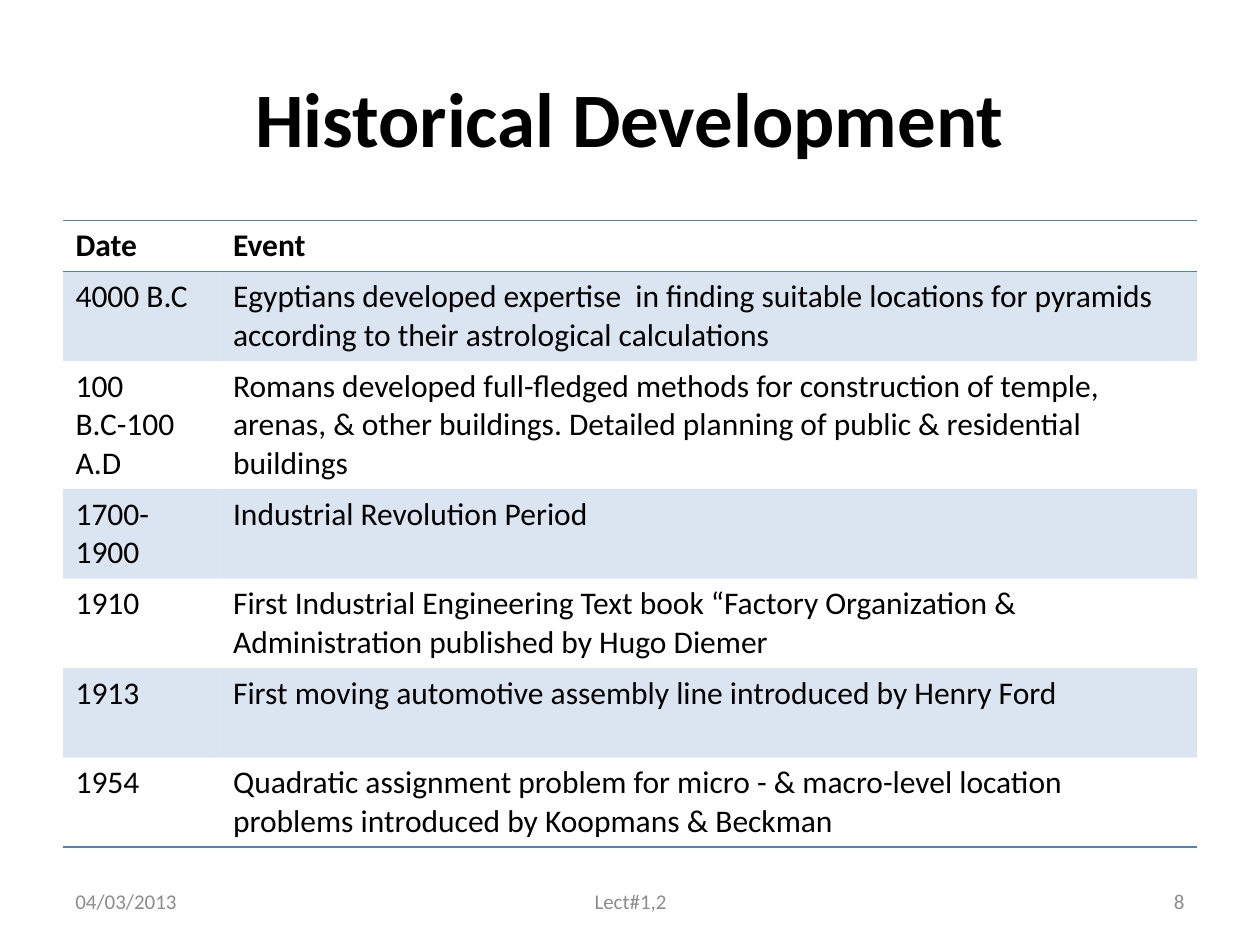
from lxml import etree
from pptx import Presentation
from pptx.dml.color import RGBColor
from pptx.enum.text import MSO_ANCHOR, PP_ALIGN
from pptx.oxml.ns import qn
from pptx.util import Inches, Pt

LEFT, CENTER, RIGHT = PP_ALIGN.LEFT, PP_ALIGN.CENTER, PP_ALIGN.RIGHT
MIDDLE = MSO_ANCHOR.MIDDLE
TITLE_ONLY = 5
FONT = "Calibri"
COLORS = {"text": "000000", "accent": "4F81BD", "footer": "8C8C8C"}
BAND_ALPHA = "20000"
LINE_HEIGHT, CELL_PADDING = 0.305, 0.1

EVENTS = [
    ("Date", "Event", 1),
    ("4000 B.C", "Egyptians developed expertise  in finding suitable locations for "
     "pyramids according to their astrological calculations", 2),
    ("100 B.C-100 A.D", "Romans developed full-fledged methods for construction of "
     "temple, arenas, & other buildings. Detailed planning of public & residential "
     "buildings", 3),
    ("1700-1900", "Industrial Revolution Period", 2),
    ("1910", "First Industrial Engineering Text book “Factory Organization & "
     "Administration published by Hugo Diemer", 2),
    ("1913", "First moving automotive assembly line introduced by Henry Ford", 2),
    ("1954", "Quadratic assignment problem for micro - & macro-level location "
     "problems introduced by Koopmans & Beckman", 2),
]
FOOTERS = [
    ("04/03/2013", 0.5, 2.33, LEFT),
    ("Lect#1,2", 3.42, 3.17, CENTER),
    ("8", 7.17, 2.33, RIGHT),
]


class SlideBuilder:
    """Holds the style and the current slide."""

    def __init__(self, presentation):
        layout = presentation.slide_layouts[TITLE_ONLY]
        self.slide = presentation.slides.add_slide(layout)

    def add_text(self, frame, text, size, color="text", bold=False, align=LEFT):
        paragraph = frame.paragraphs[0]
        paragraph.alignment = align
        run = paragraph.add_run()
        run.text = text
        formats = {"name": FONT, "size": Pt(size), "bold": bold}
        for attribute, value in formats.items():
            setattr(run.font, attribute, value)
        run.font.color.rgb = RGBColor.from_string(COLORS[color])

    def title(self, text, left, top, width, height):
        title = self.slide.shapes.title
        box = {"left": left, "top": top, "width": width, "height": height}
        for attribute, value in box.items():
            setattr(title, attribute, Inches(value))
        title.text_frame.vertical_anchor = MIDDLE
        self.add_text(title.text_frame, text, 44, bold=True, align=CENTER)

    def footer(self, text, left, width, align):
        box = self.slide.shapes.add_textbox(
            Inches(left), Inches(6.95), Inches(width), Inches(0.4))
        box.text_frame.word_wrap = True
        box.text_frame.vertical_anchor = MIDDLE
        self.add_text(box.text_frame, text, 12, "footer", align=align)

    def borders(self, cell, ruled_sides):
        properties = cell._tc.get_or_add_tcPr()
        for side in "LRTB":
            line = etree.SubElement(properties, qn(f"a:ln{side}"), w=str(Pt(1)))
            if side in ruled_sides:
                fill = etree.SubElement(line, qn("a:solidFill"))
                etree.SubElement(fill, qn("a:srgbClr"), val=COLORS["accent"])
            else:
                etree.SubElement(line, qn("a:noFill"))

    def band(self, cell, shaded):
        if not shaded:
            cell.fill.background()
            return
        cell.fill.solid()
        cell.fill.fore_color.rgb = RGBColor.from_string(COLORS["accent"])
        color = cell._tc.tcPr.find(qn("a:solidFill")).find(qn("a:srgbClr"))
        etree.SubElement(color, qn("a:alpha"), val=BAND_ALPHA)

    def table(self, events, left, top, column_widths):
        heights = [CELL_PADDING + LINE_HEIGHT * lines for *_, lines in events]
        table = self.slide.shapes.add_table(
            len(events), len(column_widths), Inches(left), Inches(top),
            Inches(sum(column_widths)), Inches(sum(heights))).table
        for column, width in zip(table.columns, column_widths):
            column.width = Inches(width)
        ruled_sides = {0: "TB", 1: "T", len(events) - 1: "B"}
        for index, (date, event, _) in enumerate(events):
            table.rows[index].height = Inches(heights[index])
            for cell, text in zip(table.rows[index].cells, (date, event)):
                self.add_text(cell.text_frame, text, 18, bold=index == 0)
                self.borders(cell, ruled_sides.get(index, ""))
                self.band(cell, index % 2 == 1)


def main():
    presentation = Presentation()
    presentation.slide_width = Inches(10)
    presentation.slide_height = Inches(7.5)
    builder = SlideBuilder(presentation)
    builder.title("Historical Development", 0.5, 0.3, 9, 1.25)
    builder.table(EVENTS, 0.5, 1.75, (1.25, 7.75))
    for footer in FOOTERS:
        builder.footer(*footer)
    presentation.save("out.pptx")


if __name__ == "__main__":
    main()
